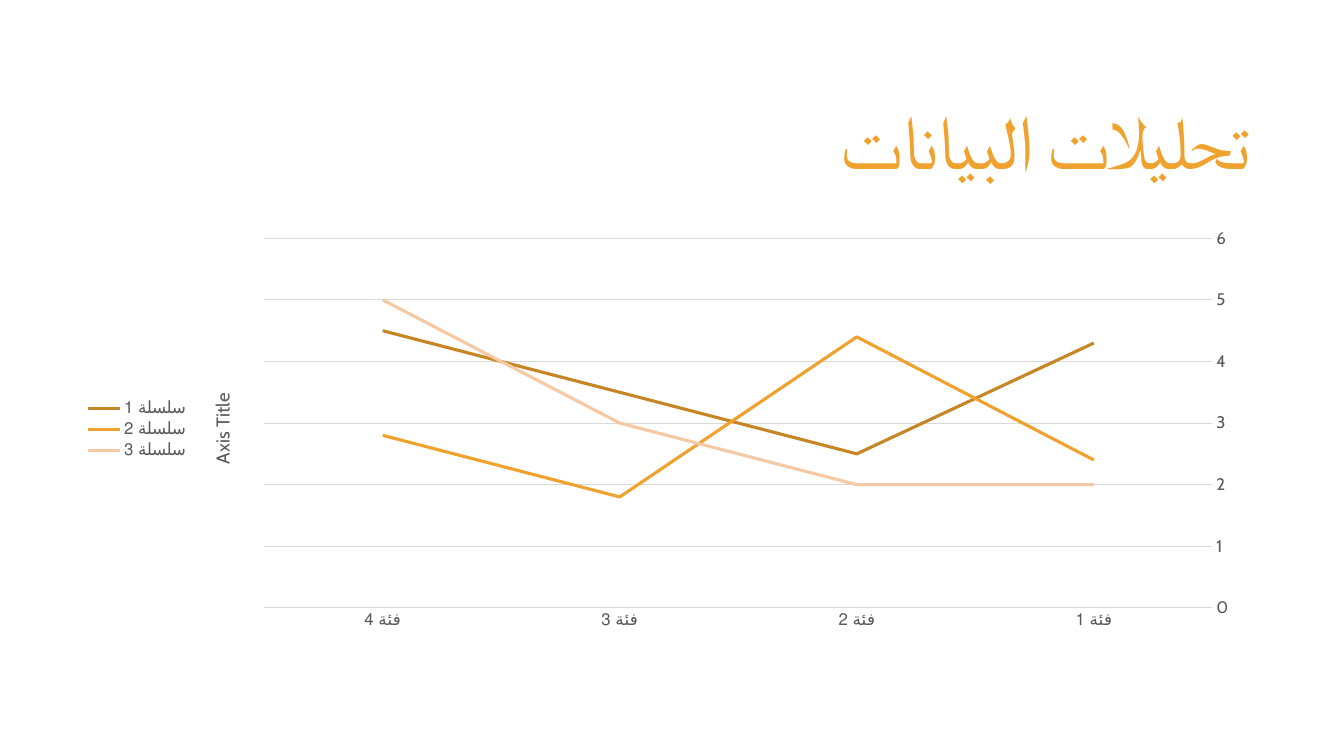
from dataclasses import dataclass

from lxml.etree import SubElement
from pptx import Presentation
from pptx.chart.chart import Chart
from pptx.chart.data import CategoryChartData
from pptx.dml.color import RGBColor
from pptx.enum.chart import XL_CHART_TYPE, XL_LEGEND_POSITION, XL_TICK_MARK
from pptx.enum.text import MSO_ANCHOR, MSO_AUTO_SIZE, PP_ALIGN
from pptx.oxml.ns import qn
from pptx.slide import Slide
from pptx.text.text import Font
from pptx.util import Cm, Pt

FONT = "Cabin"
ORANGE, LABEL_GREY, GRID_GREY = "F0A22E", "595959", "D9D9D9"


@dataclass(frozen=True)
class Series:
    name: str
    values: tuple[float, ...]
    color: str


CATEGORIES = ("فئة 1", "فئة 2", "فئة 3", "فئة 4")
SERIES = (
    Series("سلسلة 1", (4.3, 2.5, 3.5, 4.5), "C78626"),
    Series("سلسلة 2", (2.4, 4.4, 1.8, 2.8), ORANGE),
    Series("سلسلة 3", (2, 2, 3, 5), "F5C9A4"),
)


def rgb(code: str) -> RGBColor:
    return RGBColor.from_string(code)


def style_font(font: Font, size: float, color: str) -> None:
    font.name = FONT
    font.size = Pt(size)
    font.bold = False
    font.color.rgb = rgb(color)


def add_title(slide: Slide) -> None:
    title = slide.shapes.title
    title.left, title.top, title.width, title.height = Cm(1.83), Cm(1.4), Cm(29.92), Cm(4.6)
    frame = title.text_frame
    frame.vertical_anchor = MSO_ANCHOR.MIDDLE
    frame.auto_size = MSO_AUTO_SIZE.NONE
    heading = frame.paragraphs[0]
    heading.alignment = PP_ALIGN.RIGHT
    heading.line_spacing = 0.85
    heading._p.get_or_add_pPr().set("rtl", "1")
    run = heading.add_run()
    run.text = "تحليلات البيانات"
    style_font(run.font, 54, ORANGE)
    properties = run._r.get_or_add_rPr()
    properties.set("spc", "-120")
    SubElement(properties, qn("a:cs"), typeface=FONT)


def place_plot(chart: Chart, x: float, y: float, w: float, h: float) -> None:
    """Fix the inner plot area, in fractions of the chart's size."""
    plot_area = chart._chartSpace.chart.plotArea
    layout = plot_area.find(qn("c:layout"))
    if layout is None:
        layout = SubElement(plot_area, qn("c:layout"))
        plot_area.insert(0, layout)
    manual = SubElement(layout, qn("c:manualLayout"))
    settings = {"layoutTarget": "inner", "xMode": "edge", "yMode": "edge",
                "x": x, "y": y, "w": w, "h": h}
    for tag, value in settings.items():
        SubElement(manual, qn(f"c:{tag}"), val=str(value))


def format_axes(chart: Chart) -> None:
    categories, values = chart.category_axis, chart.value_axis
    for axis in (categories, values):
        axis.major_tick_mark = axis.minor_tick_mark = XL_TICK_MARK.NONE
        style_font(axis.tick_labels.font, 12, LABEL_GREY)

    categories.reverse_order = True
    values.minimum_scale, values.maximum_scale, values.major_unit = 0, 6, 1
    values.format.line.fill.background()
    for line in (categories.format.line, values.major_gridlines.format.line):
        line.color.rgb = rgb(GRID_GREY)
        line.width = Pt(0.75)

    caption = values.axis_title.text_frame
    caption._txBody.bodyPr.set("rot", "-5400000")
    caption._txBody.bodyPr.set("vert", "horz")
    run = caption.paragraphs[0].add_run()
    run.text = "Axis Title"
    style_font(run.font, 13.3, LABEL_GREY)


def add_line_chart(slide: Slide) -> None:
    data = CategoryChartData()
    data.categories = CATEGORIES
    for series in SERIES:
        data.add_series(series.name, series.values)
    chart = slide.shapes.add_chart(
        XL_CHART_TYPE.LINE, Cm(1.88), Cm(5.59), Cm(29.87), Cm(10.46), data
    ).chart
    chart.has_title = False
    style_font(chart.font, 10, "000000")

    chart.has_legend = True
    chart.legend.position = XL_LEGEND_POSITION.LEFT
    chart.legend.include_in_layout = False
    style_font(chart.legend.font, 12, LABEL_GREY)

    chart.plots[0].vary_by_categories = False
    for trace, series in zip(chart.plots[0].series, SERIES):
        trace.smooth = False
        trace.format.line.color.rgb = rgb(series.color)
        trace.format.line.width = Pt(2.25)

    format_axes(chart)
    place_plot(chart, 0.16, 0.04, 0.8, 0.89)


def main() -> None:
    deck = Presentation()
    deck.slide_width, deck.slide_height = Cm(33.87), Cm(19.05)
    slide = deck.slides.add_slide(deck.slide_layouts.get_by_name("Title Only"))
    add_title(slide)
    add_line_chart(slide)
    deck.save("out.pptx")


if __name__ == "__main__":
    main()
